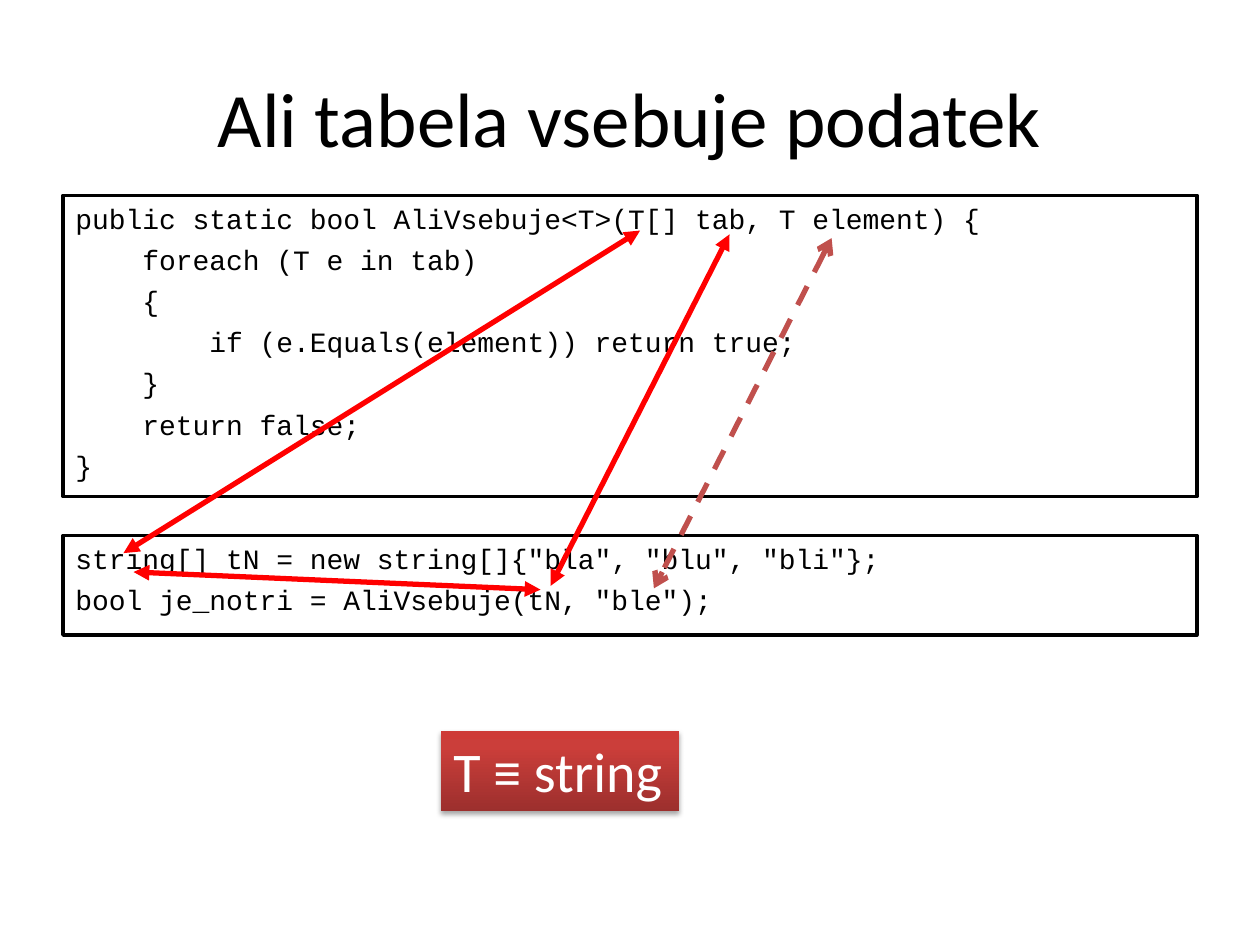
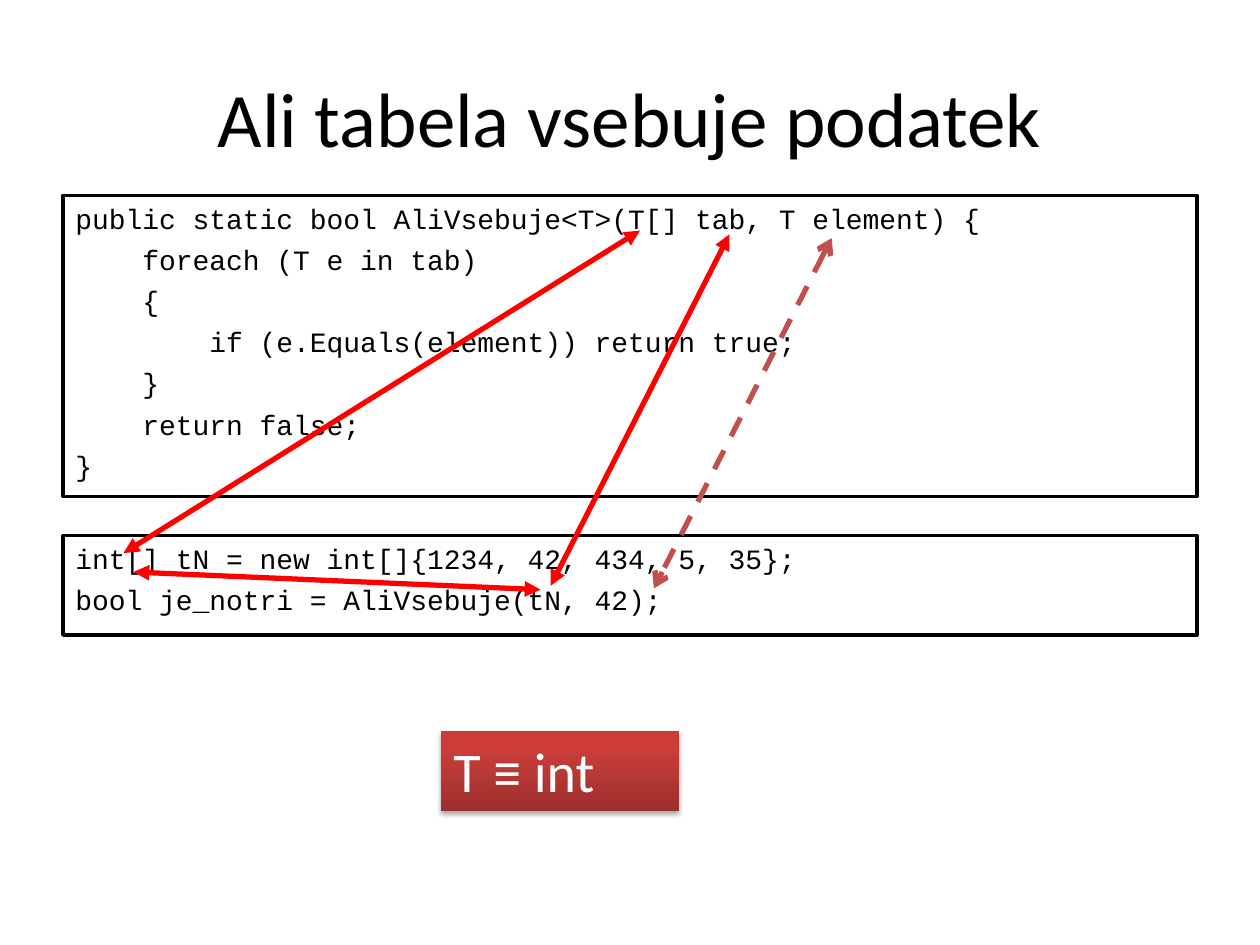
from copy import deepcopy

from lxml import etree
from pptx import Presentation
from pptx.dml.color import RGBColor
from pptx.enum.dml import MSO_LINE
from pptx.enum.shapes import MSO_CONNECTOR, MSO_SHAPE
from pptx.enum.text import MSO_ANCHOR, PP_ALIGN
from pptx.oxml.ns import qn
from pptx.util import Inches, Pt

RECT, LINE, DASH = MSO_SHAPE.RECTANGLE, MSO_CONNECTOR.STRAIGHT, MSO_LINE.DASH
LEFT, CENTER = PP_ALIGN.LEFT, PP_ALIGN.CENTER
TOP, MIDDLE = MSO_ANCHOR.TOP, MSO_ANCHOR.MIDDLE

BLACK, WHITE, RED, BRICK = "000000", "FFFFFF", "FF0000", "C0504D"
GRAD = [(0, "9C2F2D"), (0.8, "CB3E3A"), (1, "CE3B37")]
TITLE = "Ali tabela vsebuje podatek"
METHOD = """public static bool AliVsebuje<T>(T[] tab, T element) {
    foreach (T e in tab)
    {
        if (e.Equals(element)) return true;
    }
    return false;
}"""

# Calling code and the type that T stands for, per slide
CASES = [
    ('string[] tN = new string[]{"bla", "blu", "bli"};\n'
     'bool je_notri = AliVsebuje(tN, "ble");', "string"),
    ("int[] tN = new int[]{1234, 42, 434, 5, 35};\n"
     "bool je_notri = AliVsebuje(tN, 42);", "int"),
]

# Start, end, colour, arrowhead
ARROWS = [
    ((5.79, 1.86), (4.37, 4.65), RED, "triangle"),
    ((1.06, 4.54), (4.29, 4.68), RED, "triangle"),
    ((6.6, 1.89), (5.19, 4.67), BRICK, "arrow"),
    ((0.98, 4.39), (5.08, 1.83), RED, "triangle"),
]


def rgb(code):
    return RGBColor.from_string(code)


def write(shape, text, font="Calibri", size=32, color=BLACK,
          align=LEFT, anchor=TOP, gap=0):
    frame = shape.text_frame
    frame.word_wrap = True
    frame.vertical_anchor = anchor
    frame.text = text
    for para in frame.paragraphs:
        para.alignment = align
        para.space_before = Pt(gap)
        para.font.name = font
        para.font.size = Pt(size)
        para.font.color.rgb = rgb(color)


deck = Presentation()
deck.slide_width, deck.slide_height = Inches(10), Inches(7.5)

for call, kind in CASES:
    slide = deck.slides.add_slide(deck.slide_layouts[5])
    shapes = slide.shapes

    # Title
    title = shapes.title
    title.left, title.top = Inches(0.5), Inches(0.3)
    title.width, title.height = Inches(9), Inches(1.25)
    write(title, TITLE, size=44, align=CENTER, anchor=MIDDLE)

    # Code boxes
    for code, top, height in [(METHOD, 1.55, 2.39), (call, 4.25, 0.79)]:
        box = shapes.add_shape(RECT, Inches(0.5), Inches(top),
                               Inches(9), Inches(height))
        box.shadow.inherit = False
        box.fill.solid()
        box.fill.fore_color.rgb = rgb(WHITE)
        box.line.color.rgb = rgb(BLACK)
        box.line.width = Pt(2)
        write(box, code, font="Courier New", size=16, gap=4.3)

    # Arrows from parameters to arguments
    for start, end, color, head in ARROWS:
        arrow = shapes.add_connector(LINE, *map(Inches, start + end))
        arrow.line.color.rgb = rgb(color)
        arrow.line.width = Pt(3)
        if head == "arrow":
            arrow.line.dash_style = DASH
        props = arrow._element.spPr
        for tag in ("a:headEnd", "a:tailEnd"):
            etree.SubElement(props.find(qn("a:ln")), qn(tag), type=head)
        etree.SubElement(props, qn("a:effectLst"))

    # Red label with gradient and soft shadow
    label = shapes.add_shape(RECT, Inches(3.5), Inches(5.8),
                             Inches(1.89), Inches(0.64))
    label.line.fill.background()
    label.fill.gradient()
    label.fill.gradient_angle = 90
    props = label._element.spPr
    stops = props.find(".//" + qn("a:gsLst"))
    stops.append(deepcopy(stops[-1]))
    for stop, (place, color) in zip(label.fill.gradient_stops, GRAD):
        stop.position = place
        stop.color.rgb = rgb(color)
    label.shadow.inherit = False
    shade = etree.SubElement(props.find(qn("a:effectLst")), qn("a:outerShdw"),
                             blurRad=str(Pt(3.1)), dist=str(Pt(1.8)),
                             dir="5400000", rotWithShape="0")
    tone = etree.SubElement(shade, qn("a:srgbClr"), val=BLACK)
    etree.SubElement(tone, qn("a:alpha"), val="35000")
    write(label, f"T ≡ {kind}", color=WHITE)

deck.save("out.pptx")
